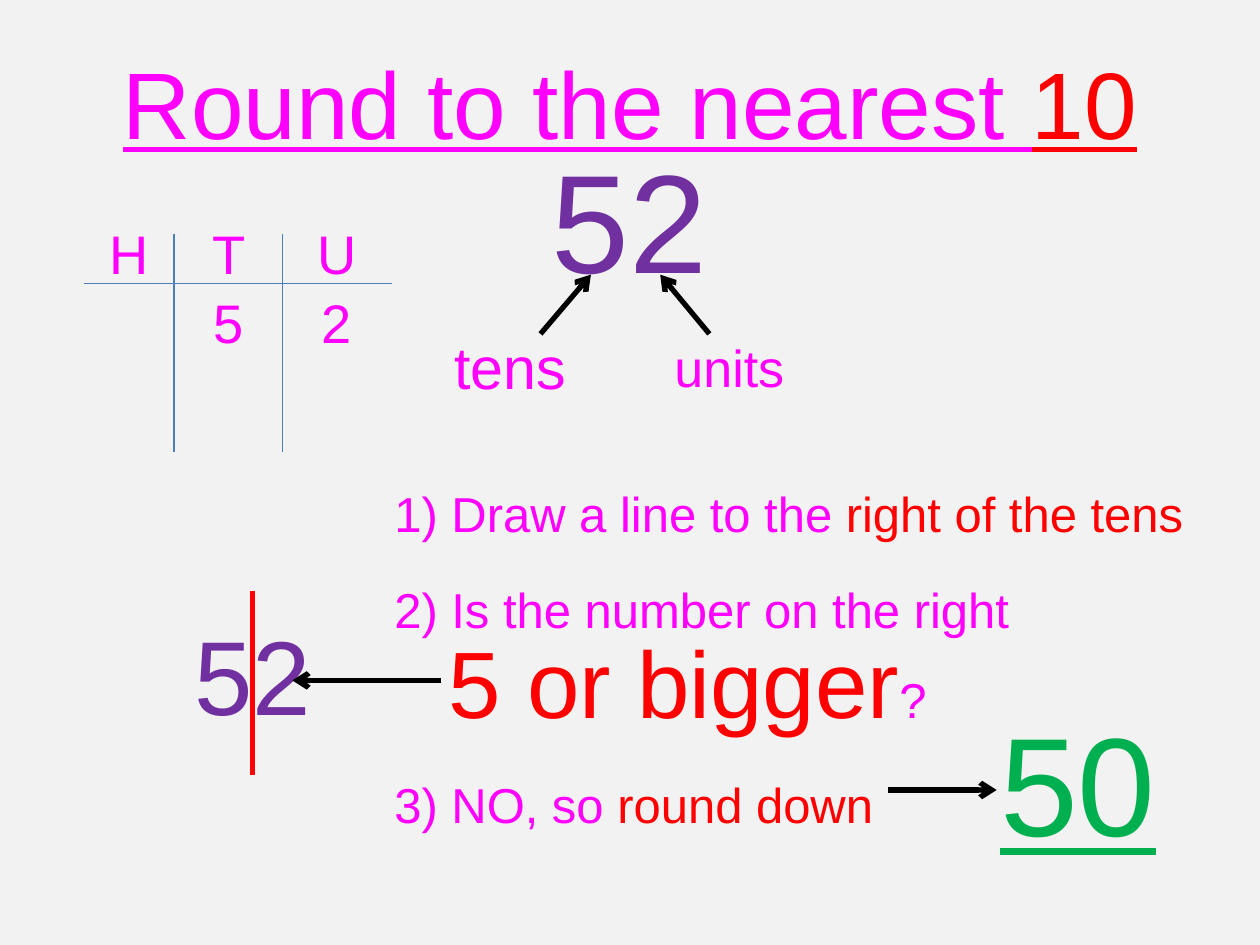
"""Builds a slide that explains rounding 52 to the nearest 10."""
from lxml.etree import SubElement
from pptx import Presentation
from pptx.dml.color import RGBColor
from pptx.enum.shapes import MSO_CONNECTOR
from pptx.enum.text import MSO_ANCHOR, PP_ALIGN
from pptx.oxml.ns import qn
from pptx.util import Inches, Pt

COLOURS = {
    "background": "F2F2F2",
    "pink": "FF00FF",
    "red": "FF0000",
    "purple": "7030A0",
    "green": "00B050",
    "blue": "4B7EBC",
    "black": "000000",
}

deck = Presentation()
deck.slide_width, deck.slide_height = Inches(10), Inches(7.5)
column, row = deck.slide_width / 100, deck.slide_height / 75
page = deck.slides.add_slide(deck.slide_layouts[6])
page.background.fill.solid()
page.background.fill.fore_color.rgb = RGBColor.from_string(COLOURS["background"])


def add_text(paragraphs, *, at, size, colour="pink", spacing=1.0, underline=False,
             align=PP_ALIGN.CENTER, anchor=MSO_ANCHOR.MIDDLE, wrap=True):
    left, top, width, height = at
    box = page.shapes.add_textbox(int(left * column), int(top * row),
                                  int(width * column), int(height * row))
    frame = box.text_frame
    frame.word_wrap = wrap
    frame.vertical_anchor = anchor
    frame.margin_left = frame.margin_right = 0
    if isinstance(paragraphs, str):
        paragraphs = [(0, 0, [(paragraphs, colour, size)])]
    for index, (before, indent, spans) in enumerate(paragraphs):
        para = frame.add_paragraph() if index else frame.paragraphs[0]
        para.alignment = align
        para.line_spacing = spacing
        para.space_before = Pt(before)
        if indent:
            para._p.get_or_add_pPr().set("marL", str(int(indent * column)))
        for words, span_colour, span_size in spans:
            span = para.add_run()
            span.text = words
            span.font.name = "Arial"
            span.font.size = Pt(span_size)
            span.font.underline = underline
            span.font.color.rgb = RGBColor.from_string(COLOURS[span_colour])
    return box


def add_line(start, end, *, colour="black", width=3, arrow=False):
    line = page.shapes.add_connector(
        MSO_CONNECTOR.STRAIGHT, int(start[0] * column), int(start[1] * row),
        int(end[0] * column), int(end[1] * row))
    line.line.color.rgb = RGBColor.from_string(COLOURS[colour])
    line.line.width = Pt(width)
    if arrow:
        SubElement(line.line._get_or_add_ln(), qn("a:tailEnd"), type="arrow")
    SubElement(line._element.spPr, qn("a:effectLst"))
    return line


title = [(0, 0, [("Round to the nearest ", "pink", 54), ("10", "red", 54)])]
add_text(title, at=(7.5, 0, 85, 16.1), size=54, underline=True)

for left, heading, digit in ((7.5, "H", ""), (15.4, "T", "5"), (24, "U", "2")):
    for top, label in ((17.8, heading), (23.3, digit)):
        if label:
            add_text(label, at=(left, top, 5.5, 5.5), size=31, spacing=0.8)
add_line((6.7, 22.5), (31.1, 22.5), colour="blue", width=0.75)
for divider in (13.8, 22.4):
    add_line((divider, 18.6), (divider, 35.9), colour="blue", width=0.75)

add_text("52", at=(41.3, 9.2, 17.3, 16.1), size=80, colour="purple")
for left, place, size, start, end in (
        (35, "tens", 33.8, 42.9, 46.9), (52.4, "units", 29.7, 56.3, 52.4)):
    add_text(place, at=(left, 24.9, 11, 9.4), size=size, spacing=0.8)
    add_line((start, 26.5), (end, 21.8), arrow=True)

split_number = add_text("52", at=(11.4, 45.4, 17.3, 16.1), size=60, colour="purple")
split = add_line((20.05, 46.9), (20.05, 61.5), colour="red")
split.end_connect(split_number, 2)

steps = [
    (0, 0, [("1) Draw a line to the ", "pink", 28), ("right of the tens", "red", 28)]),
    (28, 0, [("2) Is the number on the right", "pink", 28)]),
    (4.5, 4.3, [("5 or bigger", "red", 53.9), ("?", "pink", 28)]),
    (28, 0, [("3) NO, so ", "pink", 28), ("round down", "red", 28)]),
]
add_text(steps, at=(31.3, 38.8, 64.4, 27.6), size=28, spacing=0.8,
         align=PP_ALIGN.LEFT, anchor=MSO_ANCHOR.TOP)
add_line((35, 54), (23.2, 54), arrow=True)
add_line((70.5, 62.7), (79.1, 62.7), arrow=True)
add_text("50", at=(78.3, 54.8, 14.5, 14.5), size=80, colour="green",
         underline=True, anchor=MSO_ANCHOR.TOP, wrap=False)

deck.save("out.pptx")
